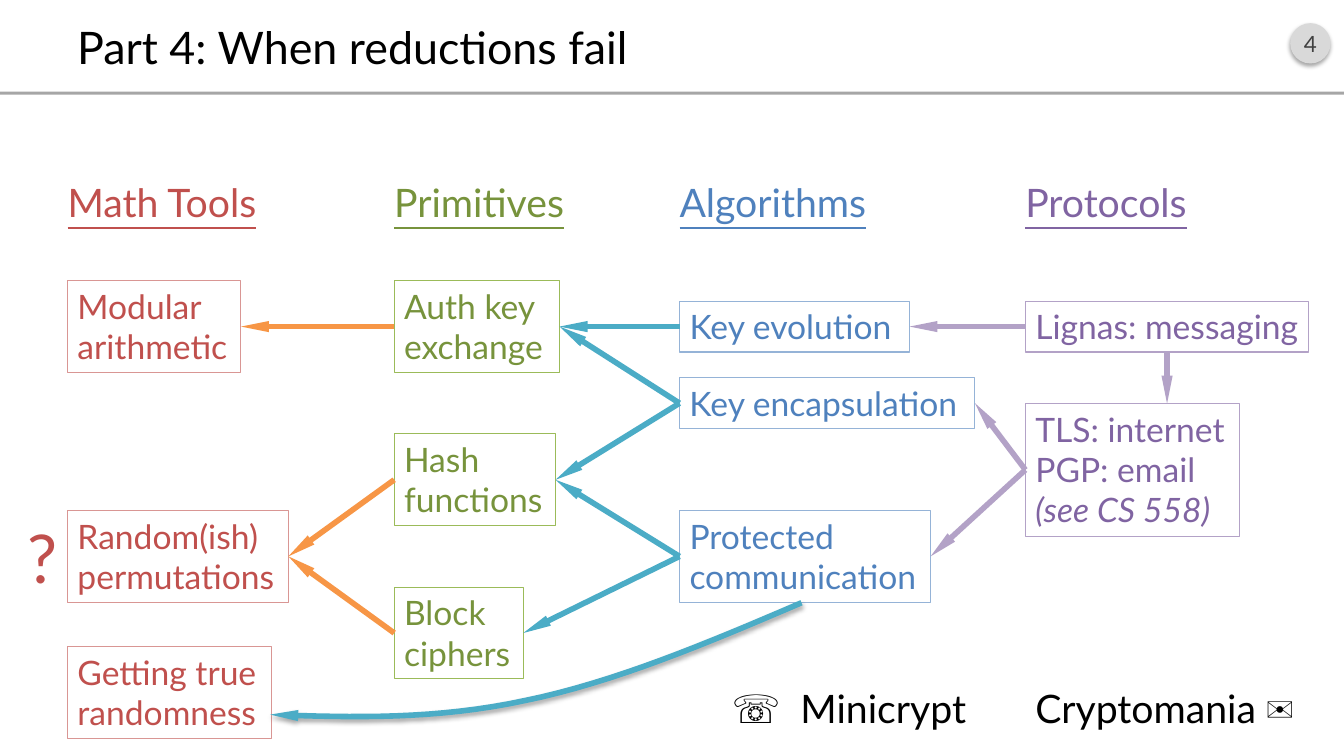
from dataclasses import dataclass

from lxml import etree
from pptx import Presentation
from pptx import util as u
from pptx.dml.color import RGBColor
from pptx.enum import shapes, text
from pptx.oxml import ns

BLACK = RGBColor(0x00, 0x00, 0x00)
RULE_GREY = RGBColor(0xA6, 0xA6, 0xA6)
BADGE_GREY = RGBColor(0xD9, 0xD9, 0xD9)
BADGE_TEXT = RGBColor(0x40, 0x40, 0x40)
ORANGE = RGBColor(0xF7, 0x96, 0x46)
TEAL = RGBColor(0x4B, 0xAC, 0xC6)
LILAC = RGBColor(0xB3, 0xA2, 0xC7)
RED = RGBColor(0xC0, 0x50, 0x4D)
PINK = RGBColor(0xD9, 0x96, 0x94)
GREEN = RGBColor(0x77, 0x93, 0x3C)
LIME = RGBColor(0x9B, 0xBB, 0x59)
BLUE = RGBColor(0x4F, 0x81, 0xBD)
SKY = RGBColor(0x95, 0xB3, 0xD7)
PURPLE = RGBColor(0x80, 0x64, 0xA2)

WIDTH, HEIGHT = 13.33, 7.5
FIRST_ROW, ROW_STEP = 3.24, 0.76  # centre of row 0, distance between rows
TOP, LEFT, BOTTOM, RIGHT = 0, 1, 2, 3


@dataclass(frozen=True)
class Column:
    heading: str
    left: float
    heading_width: float
    ink: RGBColor
    border: RGBColor


@dataclass(frozen=True)
class Topic:
    words: str  # "\v" breaks a line, "\n" starts a paragraph
    column: int
    row: float
    width: float
    lines: int = 2


@dataclass(frozen=True)
class Arrow:
    start: str
    end: str
    color: RGBColor


COLUMNS = [
    Column("Math Tools", 0.67, 2.12, RED, PINK),
    Column("Primitives", 3.91, 1.9, GREEN, LIME),
    Column("Algorithms", 6.74, 2.06, BLUE, SKY),
    Column("Protocols", 10.17, 1.8, PURPLE, LILAC),
]
TOPICS = {
    "modular": Topic("Modular\varithmetic", 0, 0, 1.72),
    "permutations": Topic("Random(ish)\vpermutations", 0, 3, 2.19),
    "randomness": Topic("Getting true\vrandomness", 0, 4.78, 2.02),
    "exchange": Topic("Auth key\vexchange", 1, 0, 1.64),
    "hash": Topic("Hash\vfunctions", 1, 2, 1.6),
    "block": Topic("Block\vciphers", 1, 4, 1.28),
    "evolution": Topic("Key evolution", 2, 0, 2.28, 1),
    "encapsulation": Topic("Key encapsulation", 2, 1, 2.93, 1),
    "protected": Topic("Protected\vcommunication", 2, 3, 2.49),
    "messaging": Topic("Lignas: messaging", 3, 0, 2.81, 1),
    "tls": Topic("TLS: internet\vPGP: email\n(see CS 558)", 3, 1.87, 2.12, 3),
}
ARROWS = [
    Arrow("exchange", "modular", ORANGE),
    Arrow("hash", "permutations", ORANGE),
    Arrow("block", "permutations", ORANGE),
    Arrow("evolution", "exchange", TEAL),
    Arrow("encapsulation", "exchange", TEAL),
    Arrow("encapsulation", "hash", TEAL),
    Arrow("protected", "hash", TEAL),
    Arrow("protected", "block", TEAL),
    Arrow("messaging", "evolution", LILAC),
    Arrow("tls", "encapsulation", LILAC),
    Arrow("tls", "protected", LILAC),
]


def write(box, words: str, size: float, color: RGBColor, align=text.PP_ALIGN.LEFT,
          underline: bool = False, **frame_format) -> None:
    settings = {"word_wrap": False, "auto_size": text.MSO_AUTO_SIZE.SHAPE_TO_FIT_TEXT,
                "vertical_anchor": text.MSO_ANCHOR.TOP} | frame_format
    frame = box.text_frame
    for name, value in settings.items():
        setattr(frame, name, value)
    frame.text = words
    font_format = {"name": "Lato", "size": u.Pt(size), "underline": underline}
    for index, para in enumerate(frame.paragraphs):
        para.alignment = align
        for span in para.runs:
            for name, value in font_format.items():
                setattr(span.font, name, value)
            span.font.italic = index > 0
            span.font.color.rgb = color


def add_label(page, left: float, top: float, width: float, height: float,
              words: str, size: float, color: RGBColor, **style) -> None:
    box = page.shapes.add_textbox(*map(u.Inches, (left, top, width, height)))
    write(box, words, size, color, **style)


def add_box(page, kind, left: float, top: float, width: float, height: float):
    box = page.shapes.add_shape(kind, *map(u.Inches, (left, top, width, height)))
    box.shadow.inherit = False
    return box


def add_shadow(box) -> None:
    effects = box._element.spPr.find(ns.qn("a:effectLst"))
    shadow = etree.SubElement(effects, ns.qn("a:outerShdw"), blurRad=str(u.Pt(3.1)),
                              dist=str(u.Pt(1.8)), dir="5400000", rotWithShape="0")
    ink = etree.SubElement(shadow, ns.qn("a:srgbClr"), val=str(BLACK))
    etree.SubElement(ink, ns.qn("a:alpha"), val="35000")


def style_arrow(line_shape, color: RGBColor) -> None:
    line_shape.line.color.rgb = color
    line_shape.line.width = u.Pt(4)
    etree.SubElement(line_shape.line._get_or_add_ln(), ns.qn("a:tailEnd"),
                     type="triangle", w="sm", len="lg")


def add_topic(page, topic: Topic):
    column = COLUMNS[topic.column]
    height = 0.1 + 0.405 * topic.lines
    top = FIRST_ROW + ROW_STEP * topic.row - height / 2
    box = add_box(page, shapes.MSO_SHAPE.RECTANGLE, column.left, top, topic.width, height)
    box.fill.background()
    box.line.color.rgb = column.border
    box.line.width = u.Pt(0.75)
    write(box, topic.words, 24, column.ink)
    return box


def add_arrow(page, color: RGBColor):
    arrow = page.shapes.add_connector(shapes.MSO_CONNECTOR.STRAIGHT, 0, 0, 0, 0)
    style_arrow(arrow, color)
    etree.SubElement(arrow._element.spPr, ns.qn("a:effectLst"))
    return arrow


def bezier(points: list, share: float) -> tuple:
    while len(points) > 1:
        points = [tuple(a + (b - a) * share for a, b in zip(p, q))
                  for p, q in zip(points, points[1:])]
    return points[0]


def add_curve(page, curves: list, color: RGBColor, steps: int = 16) -> None:
    inches = [curves[0][0]] + [bezier(curve, step / steps)
                               for curve in curves for step in range(1, steps + 1)]
    start, *rest = [tuple(map(u.Inches, point)) for point in inches]
    builder = page.shapes.build_freeform(*start)
    builder.add_line_segments(rest, close=False)
    curve_shape = builder.convert_to_shape()
    curve_shape.fill.background()
    style_arrow(curve_shape, color)
    curve_shape.shadow.inherit = False
    add_shadow(curve_shape)


def main() -> None:
    deck = Presentation()
    deck.slide_width, deck.slide_height = u.Inches(WIDTH), u.Inches(HEIGHT)
    page = deck.slides.add_slide(deck.slide_layouts[6])

    # Header: page badge, rule and title
    badge = add_box(page, shapes.MSO_SHAPE.OVAL, 0.96 * WIDTH, 0.23, 0.4, 0.4)
    rule = add_box(page, shapes.MSO_SHAPE.RECTANGLE, 0, 0.91, WIDTH, 0.03)
    for box, color in ((badge, BADGE_GREY), (rule, RULE_GREY)):
        box.fill.solid()
        box.fill.fore_color.rgb = color
        box.line.fill.background()
    add_shadow(badge)
    fixed = {"vertical_anchor": text.MSO_ANCHOR.MIDDLE,
             "auto_size": text.MSO_AUTO_SIZE.NONE, "word_wrap": True}
    write(badge, "4", 16, BADGE_TEXT, text.PP_ALIGN.CENTER, margin_left=0, margin_right=0, **fixed)
    add_label(page, 0.05 * WIDTH, 0.16, 0.9 * WIDTH, 0.6,
              "Part 4: When reductions fail", 32, BLACK, **fixed)

    # Column headings and topic boxes
    for column in COLUMNS:
        add_label(page, column.left, 1.72, column.heading_width, 0.57, column.heading,
                  28, column.ink, underline=True, margin_left=0)
    boxes = {name: add_topic(page, topic) for name, topic in TOPICS.items()}

    # Arrows from each topic to what it builds on
    for link in ARROWS:
        arrow = add_arrow(page, link.color)
        arrow.begin_connect(boxes[link.start], LEFT)
        arrow.end_connect(boxes[link.end], RIGHT)
    down = add_arrow(page, LILAC)
    down.begin_connect(boxes["messaging"], BOTTOM)
    down.end_x, down.end_y = down.begin_x, boxes["tls"].top
    add_curve(page, [[(7.95, 5.98), (7.02, 6.38), (6.09, 6.77), (5.21, 6.95)],
                     [(5.21, 6.95), (4.33, 7.14), (3.51, 7.12), (2.68, 7.09)]], TEAL)

    # Side notes
    add_label(page, 7.07, 6.74, 2.61, 0.57, "☏  Minicrypt", 28, BLACK, align=text.PP_ALIGN.RIGHT)
    add_label(page, COLUMNS[3].left, 6.74, 2.98, 0.57, "Cryptomania ✉", 28, BLACK)
    add_label(page, 0.17, 5.07, 0.52, 0.91, "?", 48, RED)

    deck.save("out.pptx")


if __name__ == "__main__":
    main()
